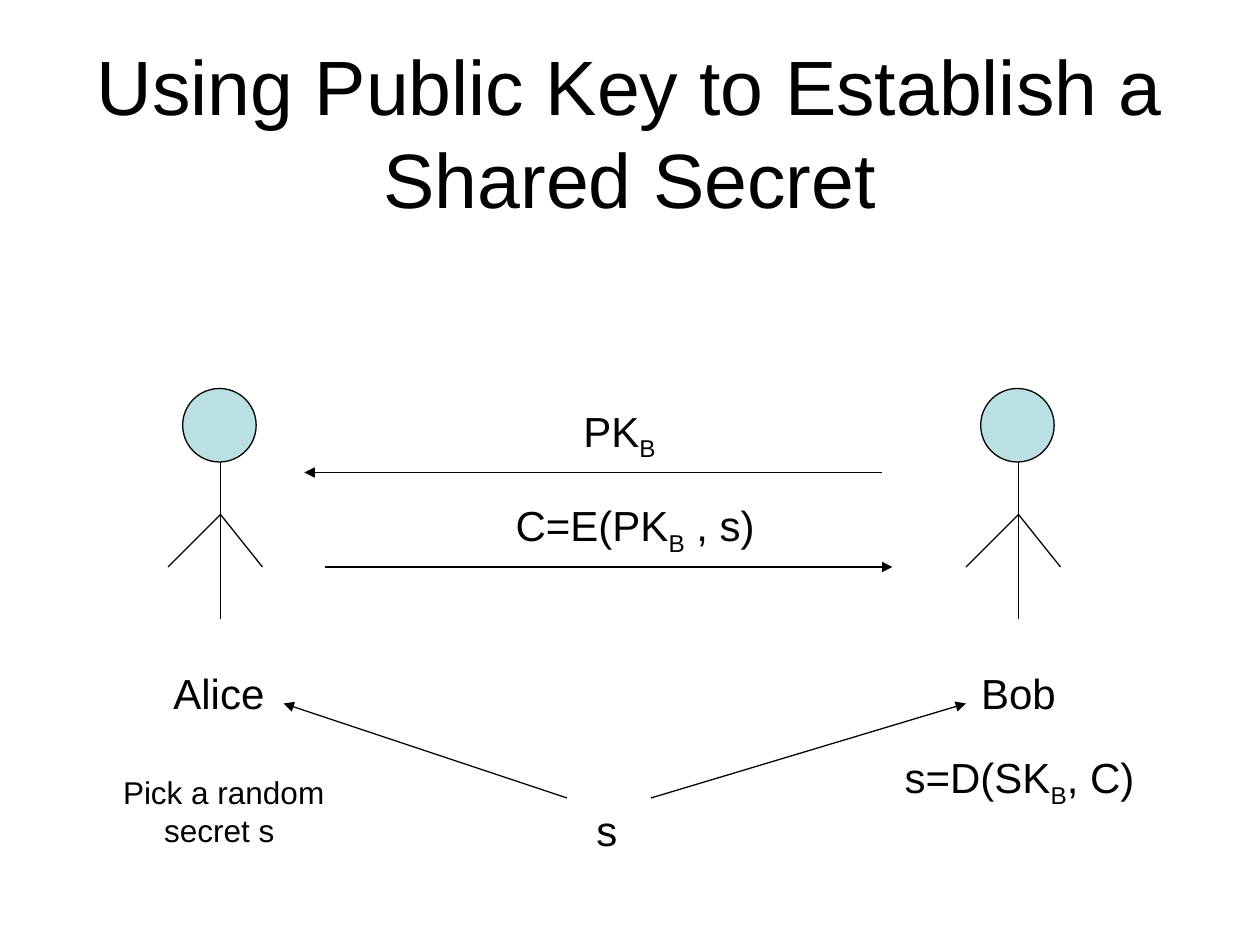
from lxml.etree import SubElement
from pptx import Presentation
from pptx.dml.color import RGBColor
from pptx.enum.shapes import MSO_CONNECTOR, MSO_SHAPE
from pptx.enum.text import MSO_ANCHOR, MSO_AUTO_SIZE, PP_ALIGN
from pptx.oxml.ns import qn
from pptx.util import Emu, Pt

PX_PER_INCH = 120
COLORS = {"ink": "000000", "head": "BBE0E3", "background": "FFFFFF"}


def px(length):
    return Emu(length * 914400 // PX_PER_INCH)


def color(name):
    return RGBColor.from_string(COLORS[name])


class SlideBuilder:
    font_name = "Arial"
    line_width = Pt(0.75)

    def __init__(self, slide):
        self.slide = slide
        slide.background.fill.solid()
        slide.background.fill.fore_color.rgb = color("background")

    def format_text(self, frame, size):
        frame.word_wrap = True
        for para in frame.paragraphs:
            para.alignment = PP_ALIGN.CENTER
            for span in para.runs:
                span.font.name = self.font_name
                span.font.size = Pt(size)
                span.font.color.rgb = color("ink")

    def title(self, text, left, top, width, height):
        box = self.slide.shapes.title
        box.left, box.top, box.width, box.height = map(px, (left, top, width, height))
        frame = box.text_frame
        frame.text = text
        frame.auto_size = MSO_AUTO_SIZE.NONE
        frame.vertical_anchor = MSO_ANCHOR.MIDDLE
        self.format_text(frame, 44)

    def label(self, text, left, top, width, height=60, size=24, subscript="", ending=""):
        box = self.slide.shapes.add_textbox(*map(px, (left, top, width, height)))
        frame = box.text_frame
        frame.text = text
        para = frame.paragraphs[0]
        if subscript:
            span = para.add_run()
            span.text = subscript
            span.font._element.set("baseline", "-25000")
        if ending:
            para.add_run().text = ending
        self.format_text(frame, size)

    def line(self, start, end, shapes=None, arrow=False):
        shapes = shapes or self.slide.shapes
        connector = shapes.add_connector(MSO_CONNECTOR.STRAIGHT, *map(px, start + end))
        connector.line.width = self.line_width
        connector.line.color.rgb = color("ink")
        if arrow:
            SubElement(connector.line._get_or_add_ln(), qn("a:tailEnd"), type="triangle")
        SubElement(connector._element.spPr, qn("a:effectLst"))

    def arrow(self, start, end):
        self.line(start, end, arrow=True)

    def person(self, center):
        shapes = self.slide.shapes.add_group_shape().shapes
        head = shapes.add_shape(MSO_SHAPE.OVAL, *map(px, (center - 36, 370, 70, 70)))
        head.shadow.inherit = False
        head.fill.solid()
        head.fill.fore_color.rgb = color("head")
        head.line.width = self.line_width
        head.line.color.rgb = color("ink")
        self.line((center, 440), (center, 590), shapes)
        for reach in (-50, 40):
            self.line((center, 490), (center + reach, 540), shapes)


def main():
    deck = Presentation()
    deck.slide_width, deck.slide_height = px(1200), px(900)
    page = SlideBuilder(deck.slides.add_slide(deck.slide_layouts[5]))

    page.title("Using Public Key to Establish a Shared Secret", 60, 50, 1080, 150)
    for center in (970, 210):
        page.person(center)

    page.arrow((840, 450), (290, 450))
    page.arrow((310, 540), (850, 540))
    page.arrow((540, 760), (270, 670))
    page.arrow((620, 760), (920, 670))

    page.label("Alice", 86, 630, 245)
    page.label("Bob", 905, 630, 130)
    page.label("PK", 520, 380, 140, subscript="B")
    page.label("C=E(PK", 430, 470, 350, subscript="B", ending=" , s)")
    page.label("s", 515, 760, 126)
    page.label("s=D(SK", 836, 710, 270, subscript="B", ending=", C)")
    page.label("Pick a random secret s ", 78, 730, 270, height=85, size=18)

    deck.save("out.pptx")


if __name__ == "__main__":
    main()
